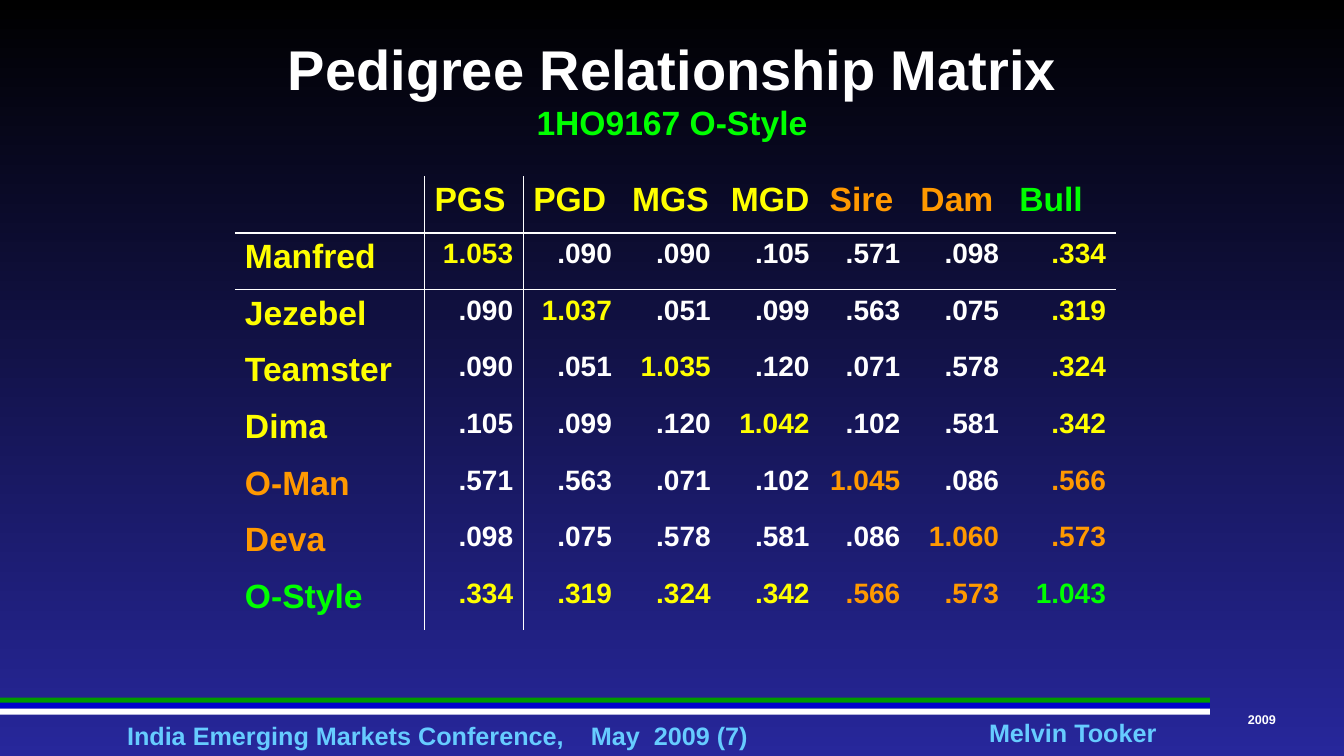
from lxml.etree import SubElement
from pptx import Presentation
from pptx.dml.color import RGBColor
from pptx.enum.shapes import MSO_SHAPE as Shape
from pptx.enum.text import MSO_ANCHOR as Anchor, PP_ALIGN as Align
from pptx.oxml import parse_xml
from pptx.oxml.ns import nsdecls, qn
from pptx.util import Inches, Pt

HUES = {
    "white": "FFFFFF", "yellow": "FFFF00", "orange": "FF9900",
    "lime": "00FF00", "sky": "66CCFF", "green": "009900",
    "blue": "0000CC", "black": "000000", "navy": "27279B",
}
HEADS = ["PGS", "PGD", "MGS", "MGD", "Sire", "Dam", "Bull"]
NAMES = ["Manfred", "Jezebel", "Teamster", "Dima", "O-Man", "Deva", "O-Style"]
TINTS = ["yellow"] * 4 + ["orange"] * 2 + ["lime"]
WIDTHS = [1.88] + [0.98] * 4 + [0.9, 0.98, 1.06]
MATRIX = [
    "1.053 .090 .090 .105 .571 .098 .334",
    ".090 1.037 .051 .099 .563 .075 .319",
    ".090 .051 1.035 .120 .071 .578 .324",
    ".105 .099 .120 1.042 .102 .581 .342",
    ".571 .563 .071 .102 1.045 .086 .566",
    ".098 .075 .578 .581 .086 1.060 .573",
    ".334 .319 .324 .342 .566 .573 1.043",
]
NO_GRID = "{2D5ABB26-0587-4C30-8999-92F81FD0307C}"


def color(name):
    return RGBColor.from_string(HUES[name])


def apply(item, values):
    for key, value in values.items():
        setattr(item, key, value)


def add_run(para, text, size, hue):
    run = para.add_run()
    run.text = text
    apply(run.font, {"name": "Arial", "size": Pt(size), "bold": True})
    run.font.color.rgb = color(hue)


def add_box(slide, at, align, inset=0, wrap=True):
    frame = slide.shapes.add_textbox(*map(Inches, at)).text_frame
    sides = ("left", "right", "top", "bottom")
    apply(frame, {f"margin_{side}": Inches(inset) for side in sides})
    apply(frame, {"word_wrap": wrap, "vertical_anchor": Anchor.MIDDLE})
    para = frame.paragraphs[0]
    para.alignment = align
    return para


def add_tab(para, pos):
    tabs = SubElement(para._p.get_or_add_pPr(), qn("a:tabLst"))
    SubElement(tabs, qn("a:tab"), pos=str(Inches(pos)), algn="l")


def add_bar(slide, top, hue):
    at = (0, top, 12, 0.06)
    bar = slide.shapes.add_shape(Shape.RECTANGLE, *map(Inches, at))
    bar.shadow.inherit = False
    bar.fill.solid()
    bar.fill.fore_color.rgb = color(hue)
    bar.line.fill.background()


def add_rules(cell, row, col):
    sides = [("L", col == 1), ("R", col == 0), ("T", row == 1), ("B", row == 0)]
    drawn = [side for side, shown in sides if shown]
    props = cell._tc.get_or_add_tcPr()
    for spot, side in enumerate(drawn):
        props.insert(spot, parse_xml(
            f'<a:ln{side} {nsdecls("a")} w="{Pt(1)}"><a:solidFill>'
            f'<a:srgbClr val="{HUES["white"]}"/></a:solidFill></a:ln{side}>'))


def pick(row, col):
    last = len(NAMES) - 1
    if row == last:
        return TINTS[col]
    return TINTS[row] if col in (row, last) else "white"


def fill_cell(cell, text, size, hue, align):
    para = cell.text_frame.paragraphs[0]
    para.alignment = align
    add_run(para, text, size, hue)


def add_matrix(slide):
    count = len(NAMES) + 1
    at = (2.33, 1.75, sum(WIDTHS), 4.5)
    table = slide.shapes.add_table(count, count, *map(Inches, at)).table
    apply(table, {"first_row": False, "horz_banding": False})
    table._tbl.tblPr.find(qn("a:tableStyleId")).text = NO_GRID
    for column, width in zip(table.columns, WIDTHS):
        column.width = Inches(width)
    for spot, (head, name, tint) in enumerate(zip(HEADS, NAMES, TINTS), 1):
        fill_cell(table.cell(0, spot), head, 24, tint, Align.LEFT)
        fill_cell(table.cell(spot, 0), name, 24, tint, Align.LEFT)
    for row, line in enumerate(MATRIX):
        for col, value in enumerate(line.split()):
            cell = table.cell(row + 1, col + 1)
            fill_cell(cell, value, 20, pick(row, col), Align.RIGHT)
    for row in range(count):
        for col in range(count):
            cell = table.cell(row, col)
            cell.fill.background()
            add_rules(cell, row, col)


def add_back(slide):
    fill = slide.background.fill
    fill.gradient()
    fill.gradient_angle = 270
    for stop, hue, pos in zip(fill.gradient_stops, ("black", "navy"), (0, 1)):
        stop.color.rgb = color(hue)
        stop.position = pos


def add_foot(slide):
    event = add_box(slide, (1.26, 7.15, 7.85, 0.3), Align.LEFT)
    add_tab(event, 4.6)
    add_run(event, "India Emerging Markets Conference,\tMay  2009 (7)", 18, "sky")
    author = add_box(slide, (9.8, 7.12, 1.68, 0.3), Align.CENTER, wrap=False)
    add_run(author, "Melvin Tooker", 18, "sky")
    year = add_box(slide, (12.33, 7.06, 0.37, 0.15), Align.CENTER)
    add_run(year, "2009", 9, "white")
    for top, hue in ((6.92, "green"), (6.97, "blue"), (7.03, "white")):
        add_bar(slide, top, hue)


def add_title(slide):
    title = add_box(slide, (0.33, 0.25, 12.67, 1.25), Align.CENTER, 0.05)
    add_run(title, "Pedigree Relationship Matrix", 40, "white")
    title.add_line_break()
    add_run(title, "1HO9167 O-Style", 24, "lime")


def main():
    deck = Presentation()
    apply(deck, {"slide_width": Inches(13.33), "slide_height": Inches(7.5)})
    slide = deck.slides.add_slide(deck.slide_layouts[6])
    add_back(slide)
    add_foot(slide)
    add_title(slide)
    add_matrix(slide)
    deck.save("out.pptx")


if __name__ == "__main__":
    main()
